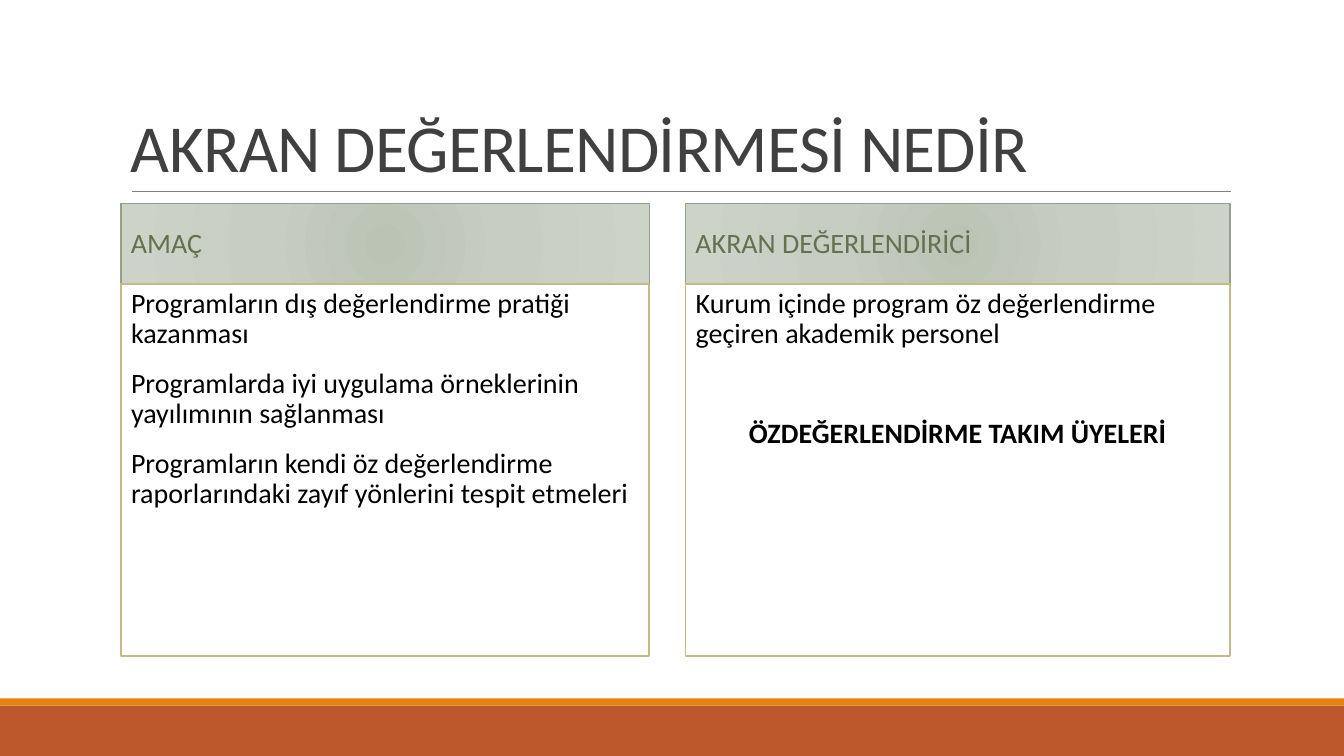
from lxml import etree
from pptx import Presentation
from pptx.dml.color import RGBColor
from pptx.enum.shapes import MSO_CONNECTOR as CONNECTOR, MSO_SHAPE as SHAPE
from pptx.enum.text import MSO_ANCHOR as ANCHOR, PP_ALIGN as ALIGN
from pptx.oxml.ns import qn
from pptx.util import Inches, Pt


def color(hex_code):
    return RGBColor.from_string(hex_code)


def add_text(paragraph, text, size, hex_code, spacing=0.9, before=12, after=2):
    paragraph.line_spacing = spacing
    paragraph.space_before, paragraph.space_after = Pt(before), Pt(after)
    run = paragraph.add_run()
    run.text = text
    run.font.name, run.font.size = "Calibri", Pt(size)
    run.font.color.rgb = color(hex_code)
    return run


prs = Presentation()
prs.slide_width, prs.slide_height = Inches(13.33), Inches(7.5)
slide = prs.slides.add_slide(prs.slide_layouts[6])
shapes = slide.shapes

# Footer bands
for top, height, fill in [(7, 0.5, "BD582C"), (6.93, 0.07, "E48312")]:
    band = shapes.add_shape(SHAPE.RECTANGLE, 0, Inches(top), prs.slide_width, Inches(height))
    band.shadow.inherit = False
    band.fill.solid()
    band.fill.fore_color.rgb = color(fill)
    band.line.fill.background()

# Title and the rule below it
rule = shapes.add_connector(CONNECTOR.STRAIGHT, Inches(1.31), Inches(1.9), Inches(12.21), Inches(1.9))
rule.line.color.rgb = color("808080")
rule.line.width = Pt(0.5)
etree.SubElement(rule._element.spPr, qn("a:effectLst"))

title = shapes.add_textbox(Inches(1.2), Inches(0.31), Inches(11), Inches(1.59)).text_frame
title.word_wrap = True
title.vertical_anchor = ANCHOR.BOTTOM
title_run = add_text(title.paragraphs[0], "AKRAN DEĞERLENDİRMESİ NEDİR", 48, "404040", 0.85, 0, 0)
title_run.font._element.set("spc", "-50")

# Two columns: heading over a body of (text, is key phrase)
columns = [
    (1.2, 5.24, "AMAÇ", [
        ("Programların dış değerlendirme pratiği kazanması", False),
        ("Programlarda iyi uygulama örneklerinin yayılımının sağlanması", False),
        ("Programların kendi öz değerlendirme raporlarındaki zayıf yönlerini tespit etmeleri", False),
    ]),
    (6.8, 5.4, "AKRAN DEĞERLENDİRİCİ", [
        ("Kurum içinde program öz değerlendirme geçiren akademik personel", False),
        ("ÖZDEĞERLENDİRME TAKIM ÜYELERİ", True),
    ]),
]
heading_stops = [(0, "BBC3B5"), (45, "C7CDC1"), (100, "CDD4C7")]

for left, width, heading_text, body_items in columns:
    heading = shapes.add_shape(SHAPE.RECTANGLE, Inches(left), Inches(2.02), Inches(width), Inches(0.81))
    body = shapes.add_shape(SHAPE.RECTANGLE, Inches(left), Inches(2.82), Inches(width), Inches(3.69))
    for box, outline, weight in [(heading, "94A088", 1), (body, "C2BC80", 1.25)]:
        box.shadow.inherit = False
        box.line.color.rgb = color(outline)
        box.line.width = Pt(weight)
        box.text_frame.word_wrap = True

    # Radial gradient behind the heading
    heading.fill.gradient()
    gradient = heading._element.spPr.find(qn("a:gradFill"))
    for child in list(gradient):
        gradient.remove(child)
    stops = etree.SubElement(gradient, qn("a:gsLst"))
    for position, hex_code in heading_stops:
        stop = etree.SubElement(stops, qn("a:gs"), pos=str(position * 1000))
        etree.SubElement(stop, qn("a:srgbClr"), val=hex_code)
    radial = etree.SubElement(gradient, qn("a:path"), attrib={"path": "circle"})
    etree.SubElement(radial, qn("a:fillToRect"), attrib=dict.fromkeys("ltrb", "100000"))

    heading.text_frame.vertical_anchor = ANCHOR.MIDDLE
    heading_line = heading.text_frame.paragraphs[0]
    heading_line.alignment = ALIGN.LEFT
    add_text(heading_line, heading_text, 20, "637052")

    # Body text
    body.fill.solid()
    body.fill.fore_color.rgb = color("FFFFFF")
    frame = body.text_frame
    frame.vertical_anchor = ANCHOR.TOP
    frame.margin_left = frame.margin_right = 0
    for index, (text, is_key) in enumerate(body_items):
        item = frame.add_paragraph() if index else frame.paragraphs[0]
        item.alignment = ALIGN.CENTER if is_key else ALIGN.LEFT
        run = add_text(item, text, 20, "000000", before=48 if is_key else 12)
        run.font.bold = is_key
        if not is_key:
            item._p.get_or_add_pPr().set("marL", str(Inches(0.1)))

prs.save("out.pptx")
